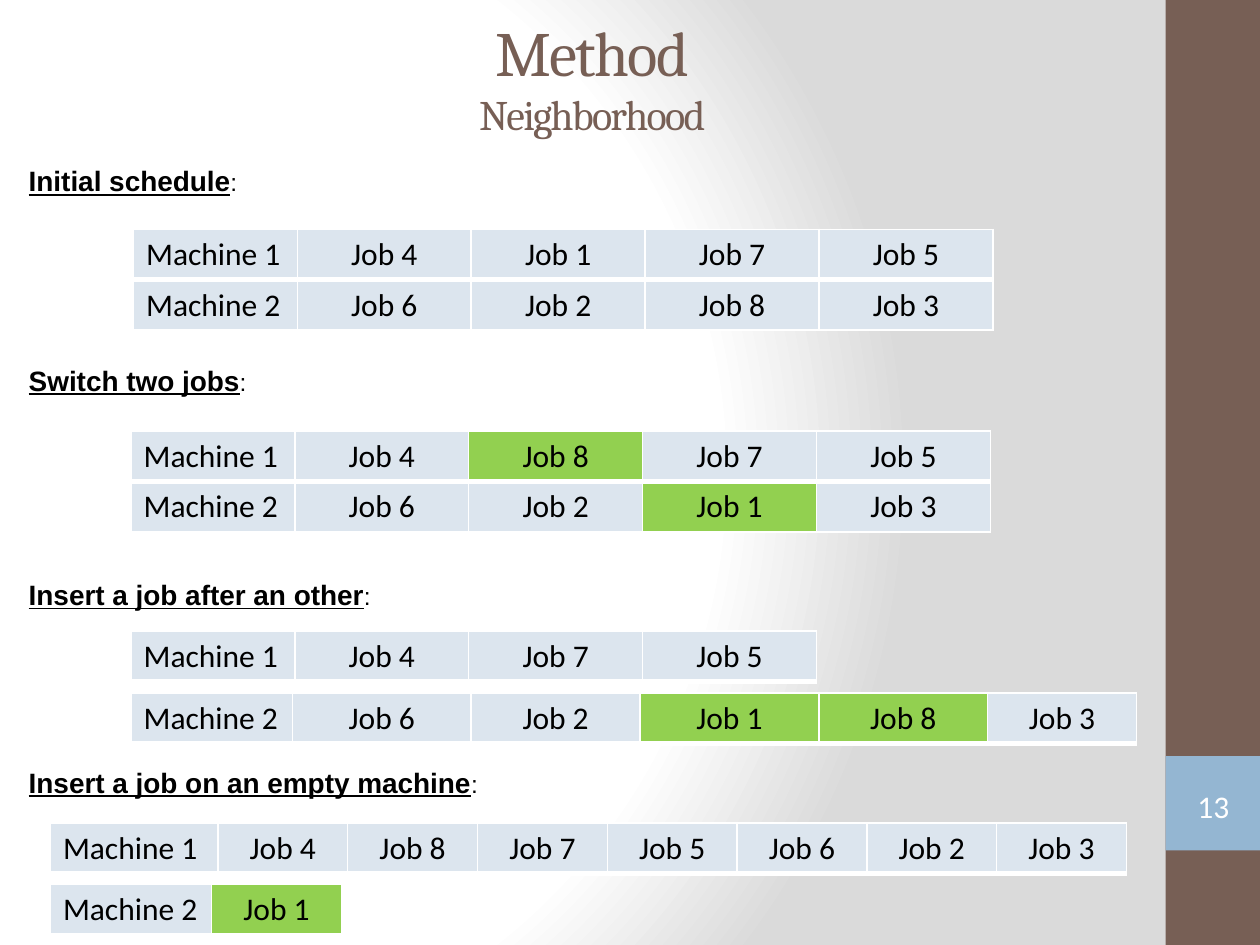
from lxml import etree
from pptx import Presentation
from pptx.dml.color import RGBColor
from pptx.enum import shapes, text
from pptx.oxml import parse_xml
from pptx.oxml.ns import nsdecls, qn
from pptx.util import Inches, Pt

COLORS = {"brown": "775F55", "blue": "94B6D2", "cell": "DCE5EE", "moved": "92D050",
          "white": "FFFFFF", "gray": "DADADA", "black": "000000"}

TITLE, SUBTITLE, PAGE = "Method", "Neighborhood", "13"

# Heading text and its top
HEADINGS = [
    ("Initial schedule", 1.25),
    ("Switch two jobs", 2.83),
    ("Insert a job after an other", 4.53),
    ("Insert a job on an empty machine", 6.02),
]

# Left, top, column widths, then one row per machine: number and jobs (* = moved job)
EVEN = [1.3] + [1.38] * 4
SCHEDULES = [
    (1.06, 1.82, EVEN, [(1, "4 1 7 5"), (2, "6 2 8 3")]),
    (1.04, 3.42, EVEN, [(1, "4 8* 7 5"), (2, "6 2 1* 3")]),
    (1.04, 5.01, EVEN[:4], [(1, "4 7 5")]),
    (1.04, 5.5, [1.28, 1.42, 1.34, 1.42, 1.34, 1.18], [(2, "6 2 1* 8* 3")]),
    (0.4, 6.53, [1.33] + [1.03] * 7, [(1, "4 8 7 5 6 2 3")]),
    (0.4, 7.02, [1.28, 1.03], [(2, "1*")]),
]
ROW_HEIGHT = 0.4


def rgb(name):
    return RGBColor.from_string(COLORS[name])


def style(font, name, size, color):
    font.name, font.size = name, Pt(size)
    font.color.rgb = rgb(color)


def add_background(slide):
    stops = "".join(f'<a:gs pos="{pos * 1000}"><a:srgbClr val="{COLORS[c]}"/></a:gs>'
                    for pos, c in [(0, "white"), (75, "white"), (100, "gray")])
    bg = parse_xml(
        f'<p:bg {nsdecls("p", "a")}><p:bgPr><a:gradFill rotWithShape="1">'
        f'<a:gsLst>{stops}</a:gsLst><a:path path="circle">'
        '<a:fillToRect l="20000" t="50000" r="100000" b="50000"/></a:path>'
        '</a:gradFill><a:effectLst/></p:bgPr></p:bg>')
    slide.element.cSld.insert(0, bg)


def add_block(slide, kind, box, fill=None):
    sp = slide.shapes.add_shape(kind, *map(Inches, box))
    sp.shadow.inherit = False
    sp.line.fill.background()
    if fill:
        sp.fill.solid()
        sp.fill.fore_color.rgb = rgb(fill)
    else:
        sp.fill.background()
    return sp


def add_text(slide, box):
    tf = slide.shapes.add_textbox(*map(Inches, box)).text_frame
    tf.word_wrap = True
    tf.vertical_anchor = text.MSO_ANCHOR.MIDDLE
    return tf


def add_borders(cell, bottom):
    tc_pr = cell._tc.get_or_add_tcPr()
    for i, (side, width) in enumerate([("L", 1), ("R", 1), ("T", 1), ("B", bottom)]):
        ln = etree.Element(qn(f"a:ln{side}"), w=str(Pt(width)))
        fill = etree.SubElement(ln, qn("a:solidFill"))
        etree.SubElement(fill, qn("a:srgbClr"), val=COLORS["white"])
        tc_pr.insert(i, ln)


def add_schedule(slide, left, top, widths, machines):
    size = (sum(widths), ROW_HEIGHT * len(machines))
    table = slide.shapes.add_table(len(machines), len(widths),
                                   *map(Inches, (left, top, *size))).table
    table.first_row = table.horz_banding = False
    for column, width in zip(table.columns, widths):
        column.width = Inches(width)
    for r, (machine, jobs) in enumerate(machines):
        table.rows[r].height = Inches(ROW_HEIGHT)
        labels = [f"Machine {machine}"] + [f"Job {job}" for job in jobs.split()]
        for c, label in enumerate(labels):
            cell = table.cell(r, c)
            cell.text = label.rstrip("*")
            p = cell.text_frame.paragraphs[0]
            p.alignment = text.PP_ALIGN.CENTER if c else text.PP_ALIGN.LEFT
            style(p.font, "Calibri", 18, "black")
            cell.fill.solid()
            cell.fill.fore_color.rgb = rgb("moved" if label.endswith("*") else "cell")
            add_borders(cell, bottom=1 if r else 3)


prs = Presentation()
prs.slide_width, prs.slide_height = Inches(10), Inches(7.5)
slide = prs.slides.add_slide(prs.slide_layouts[6])
add_background(slide)

# Side band with the page number
add_block(slide, shapes.MSO_SHAPE.RECTANGLE, (9.25, 0, 0.75, 7.5), "brown")
add_block(slide, shapes.MSO_SHAPE.RECTANGLE, (9.25, 6, 0.75, 0.75), "blue")
number = add_block(slide, shapes.MSO_SHAPE.DOUBLE_BRACKET, (9.33, 6.18, 0.6, 0.43))
tf = number.text_frame
tf.margin_left = tf.margin_right = tf.margin_top = tf.margin_bottom = 0
tf.vertical_anchor = text.MSO_ANCHOR.MIDDLE
p = tf.paragraphs[0]
p.text, p.alignment = PAGE, text.PP_ALIGN.CENTER
style(p.font, "Calibri", 18, "white")

# Title
p = add_text(slide, (-0.16, -0.02, 9.72, 1.25)).paragraphs[0]
p.alignment = text.PP_ALIGN.CENTER
for line, size in [(TITLE, 36), (SUBTITLE, 24)]:
    if p.runs:
        p.add_line_break()
    r = p.add_run()
    r.text = line
    style(r.font, "Cambria", size, "brown")
    r.font._element.set("spc", "-100")

# Headings
for heading, top in HEADINGS:
    p = add_text(slide, (0.13, top, 9.06, 0.37)).paragraphs[0]
    for part, size, strong in [(heading, 16, True), (":", 14, False)]:
        r = p.add_run()
        r.text = part
        style(r.font, "Arial", size, "black")
        r.font.bold = r.font.underline = strong

# Schedules
for schedule in SCHEDULES:
    add_schedule(slide, *schedule)

prs.save("out.pptx")
